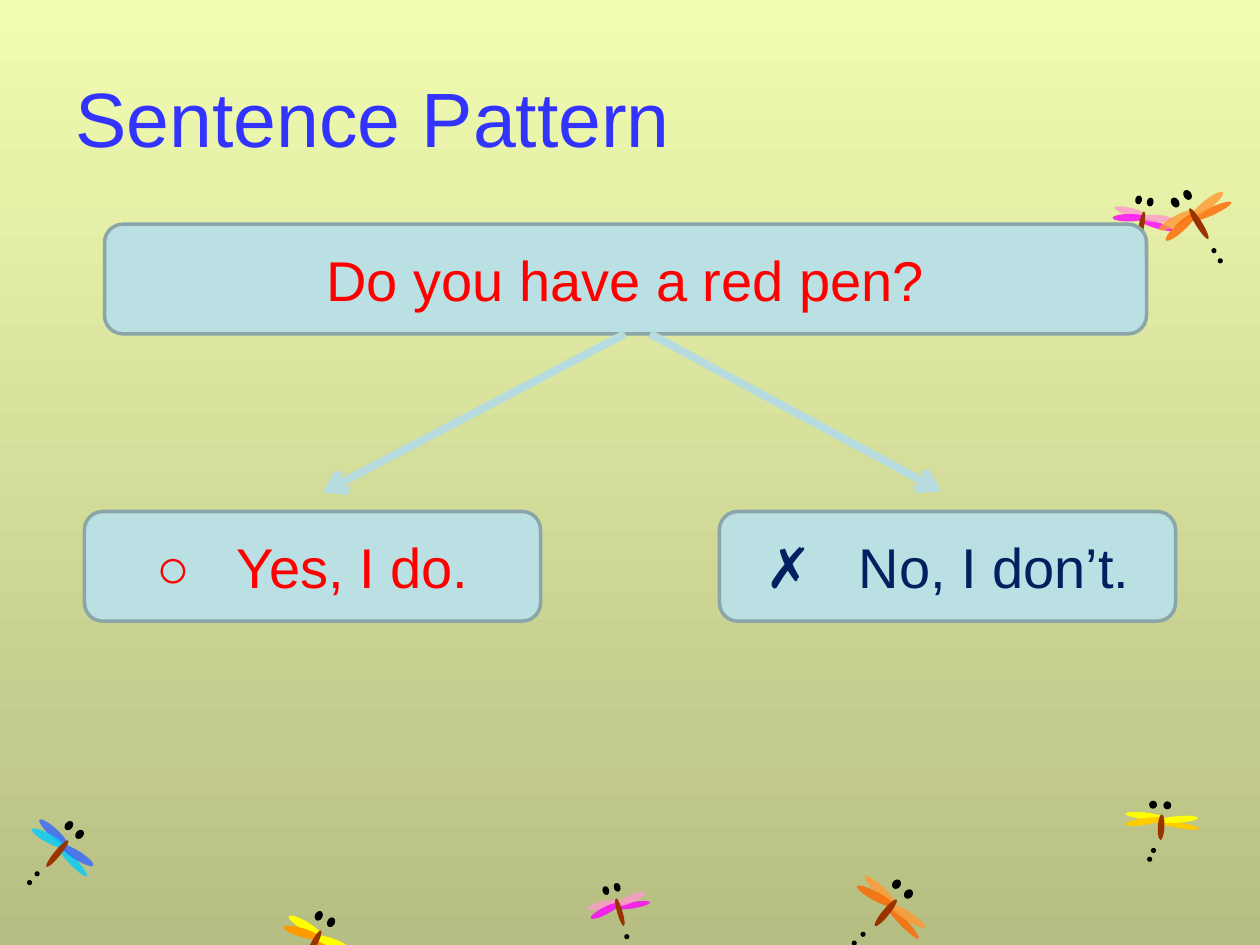
from math import cos, radians, sin

from lxml import etree
from pptx import Presentation
from pptx import util as u
from pptx.dml.color import RGBColor
from pptx.enum import shapes, text
from pptx.oxml import ns

THEME = dict(
    font="Arial", title_size=44, body_size=32, gap=17.8,
    title="3333FF", box="BBE0E3", border="8AA6A8", arrow="B6DCDF",
    sky=("F2FDB1", "B7BE83"), body="993300", dark="000000",
    red="FF0000", navy="002060",
    pink=("FF99CC", "FF00FF", 80), yellow=("FFFF00", "FF9900", 100),
    blue=("3366FF", "00CCFF", 80), gold=("FFFF00", "FFCC00", 100),
    orange=("FF9933", "FF6600", 80),
)
WIDTH, HEIGHT = 10, 7.5

TITLE = ("Sentence Pattern", (5, 4, 90, 16.67))
QUESTION = (["Do you have a red pen?"], "red", (8.3, 23.73, 82.7, 11.6))
ANSWERS = [
    (["○", "Yes, I do."], "red", (6.7, 54.13, 36.2, 11.6)),
    (["✗", "No, I don’t."], "navy", (57.1, 54.13, 36.2, 11.6)),
]
ARROWS = [((49.6, 35.33), (25.6, 52.13)), ((51.6, 35.33), (74.7, 52))]

DRAGONFLIES = [
    ("pink", (90.6, 23.87), 10.4, (0.85, 0.85), []),
    ("pink", (49.2, 96.53), 343.9, (0.85, 0.85), [(49.75, 99.13)]),
    ("yellow", (24.85, 100.07), 27.6, (1, 1), []),
    ("blue", (4.55, 90.33), 39.4, (1, 1),
     [(2.95, 92.47), (2.35, 93.4)]),
    ("gold", (92.15, 87.53), 2.8, (1.03, 0.76),
     [(91.55, 90), (91.25, 90.93)]),
    ("orange", (70.3, 96.6), 39.4, (1.12, 1),
     [(68.5, 98.87), (67.8, 99.8)]),
    ("orange", (95.15, 23.67), 328.6, (1.05, 1.05),
     [(96.35, 26.53), (96.85, 27.6)]),
]
WINGS = [
    (1, (0.13, -0.03), (0.33, 0.06), 7),
    (0, (0.13, -0.09), (0.3, 0.07), 172.9),
    (0, (-0.13, -0.11), (0.3, 0.07), 183.1),
    (1, (-0.13, -0.05), (0.3, 0.07), 349),
]
EYES = [(-0.07, -0.23), (0.04, -0.23)]


def place(x, y):
    return x * WIDTH / 100, y * HEIGHT / 100


def area(box):
    return [u.Inches(v) for v in place(*box[:2]) + place(*box[2:])]


def color(name):
    return RGBColor.from_string(THEME.get(name, name))


def style(run, size, shade):
    run.font.name = THEME["font"]
    run.font.size = u.Pt(size)
    run.font.color.rgb = color(shade)


def oval(slide, center, size, turn, shade, opacity=100, outlined=False):
    (x, y), (w, h) = center, size
    part = slide.shapes.add_shape(
        shapes.MSO_SHAPE.OVAL, u.Inches(x - w / 2), u.Inches(y - h / 2),
        u.Inches(w), u.Inches(h))
    part.shadow.inherit = False
    part.rotation = turn % 360
    part.fill.solid()
    part.fill.fore_color.rgb = color(shade)
    if opacity < 100:
        tint = part.fill._xPr.find(".//" + ns.qn("a:srgbClr"))
        etree.SubElement(tint, ns.qn("a:alpha"), val=str(opacity * 1000))
    if outlined:
        part.line.color.rgb = color(shade)
        part.line.width = u.Pt(0.75)
    else:
        part.line.fill.background()


def dragonfly(slide, palette, center, turn, scale, tail):
    cx, cy = place(*center)
    sx, sy = scale
    c, s = cos(radians(turn)), sin(radians(turn))
    *wing_shades, opacity = THEME[palette]

    def around(offset):
        x, y = offset[0] * sx, offset[1] * sy
        return cx + x * c - y * s, cy + x * s + y * c

    for shade, offset, (length, depth), angle in WINGS:
        oval(slide, around(offset), (length * sx, depth * sy),
             turn + angle, wing_shades[shade], opacity)
    oval(slide, (cx, cy), (0.05 * sx, 0.27 * sy), turn, "body")
    for eye in EYES:
        oval(slide, around(eye), (0.05 * sx, 0.07 * sy), turn,
             "dark", outlined=True)
    for dot in tail:
        oval(slide, place(*dot), (0.03, 0.03), 0, "dark", outlined=True)


def sentence_box(slide, parts, shade, box):
    panel = slide.shapes.add_shape(
        shapes.MSO_SHAPE.ROUNDED_RECTANGLE, *area(box))
    panel.shadow.inherit = False
    panel.fill.solid()
    panel.fill.fore_color.rgb = color("box")
    panel.line.color.rgb = color("border")
    panel.line.width = u.Pt(2)
    panel.text_frame.vertical_anchor = text.MSO_ANCHOR.MIDDLE
    sentence = panel.text_frame.paragraphs[0]
    sentence.alignment = text.PP_ALIGN.CENTER
    for index, words in enumerate(parts):
        if index:
            gap = sentence.add_run()
            gap.text = " "
            style(gap, THEME["body_size"], shade)
            gap.font._rPr.set("spc", str(round(THEME["gap"] * 100)))
        run = sentence.add_run()
        run.text = words
        style(run, THEME["body_size"], shade)


def arrow(slide, start, end):
    ends = [u.Inches(v) for v in place(*start) + place(*end)]
    link = slide.shapes.add_connector(shapes.MSO_CONNECTOR.STRAIGHT, *ends)
    link.line.color.rgb = color("arrow")
    link.line.width = u.Pt(4.5)
    etree.SubElement(link.line._get_or_add_ln(), ns.qn("a:tailEnd"),
                     type="arrow")
    etree.SubElement(link._element.spPr, ns.qn("a:effectLst"))


def main():
    deck = Presentation()
    deck.slide_width, deck.slide_height = u.Inches(WIDTH), u.Inches(HEIGHT)
    slide = deck.slides.add_slide(deck.slide_layouts[6])

    sky = slide.background.fill
    sky.gradient()
    sky.gradient_angle = 270
    for stop, position, shade in zip(sky.gradient_stops, (0, 1), THEME["sky"]):
        stop.position = position
        stop.color.rgb = color(shade)

    for insect in DRAGONFLIES:
        dragonfly(slide, *insect)

    words, box = TITLE
    heading = slide.shapes.add_textbox(*area(box)).text_frame
    heading.word_wrap = True
    heading.vertical_anchor = text.MSO_ANCHOR.MIDDLE
    heading.text = words
    style(heading.paragraphs[0].runs[0], THEME["title_size"], "title")

    sentence_box(slide, *QUESTION)
    for answer, ends in zip(ANSWERS, ARROWS):
        arrow(slide, *ends)
        sentence_box(slide, *answer)

    deck.save("out.pptx")


if __name__ == "__main__":
    main()
